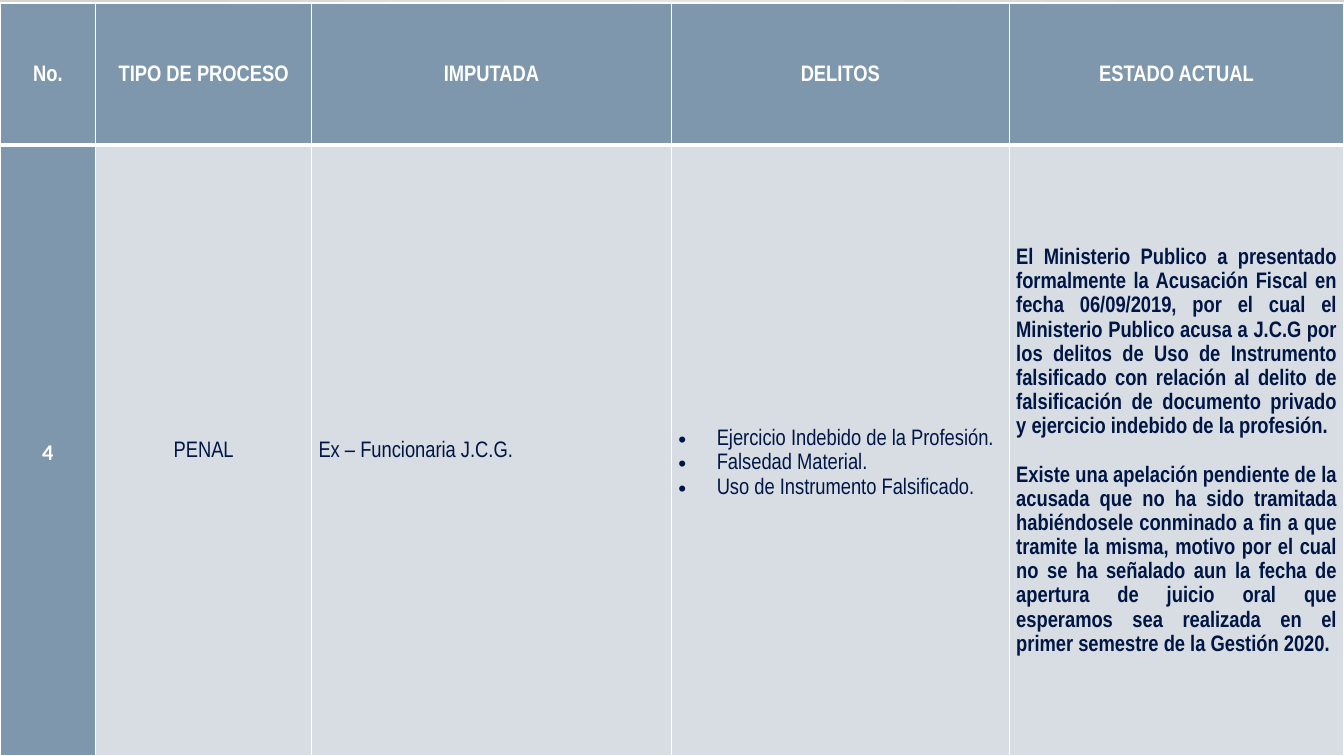
import pptx
import pptx.util
import pptx.oxml
import pptx.oxml.ns
import pptx.dml.color
import pptx.enum.text

Inches = pptx.util.Inches
Pt = pptx.util.Pt
RGB = pptx.dml.color.RGBColor
ALIGN = pptx.enum.text.PP_ALIGN

WHITE = RGB(0xFF, 0xFF, 0xFF)
GREY = RGB(0xD3, 0xD3, 0xD3)
STEEL = RGB(0x7E, 0x97, 0xAD)
PALE = RGB(0xD8, 0xDD, 0xE3)
NAVY = RGB(0x00, 0x16, 0x44)

HEADS = ["No.", "TIPO DE PROCESO", "IMPUTADA", "DELITOS", "ESTADO ACTUAL"]
CRIMES = [
    "Ejercicio Indebido de la Profesión.",
    "Falsedad Material.",
    "Uso de Instrumento Falsificado.",
]
STATUS = [
    "El Ministerio Publico a presentado formalmente la Acusación Fiscal en "
    "fecha 06/09/2019, por el cual el Ministerio Publico acusa a J.C.G por los "
    "delitos de Uso de Instrumento falsificado con relación al delito de "
    "falsificación de documento privado y ejercicio indebido de la profesión.",
    "Existe una apelación pendiente de la acusada que no ha sido tramitada "
    "habiéndosele conminado a fin a que tramite la misma, motivo por el cual "
    "no se ha señalado aun la fecha de apertura de juicio oral que esperamos "
    "sea realizada en el primer semestre de la Gestión 2020.",
]
WIDTHS = [0.95, 2.14, 3.57, 3.35, 3.32]
HEIGHTS = [1.41, 6.06]
TOP = 0.03
GAP = Pt(17.25)

HEAD = {"fill": STEEL, "color": WHITE, "bold": True, "align": ALIGN.CENTER}
BODY = {"fill": PALE, "color": NAVY, "bold": False, "align": ALIGN.JUSTIFY}
ROWS = [
    [([text], HEAD) for text in HEADS],
    [
        (["4"], HEAD | {"name": "Calibri"}),
        (["PENAL"], BODY | {"align": ALIGN.CENTER}),
        (["Ex – Funcionaria J.C.G."], BODY),
        (CRIMES, BODY | {"bullet": True, "top": GAP}),
        (STATUS, BODY | {"bold": True, "gap": GAP}),
    ],
]


def paint(slide):
    """Give the slide a radial gradient background."""
    fill = slide.background.fill
    fill.gradient()
    grad = slide.background._cSld.bg.bgPr.find(pptx.oxml.ns.qn("a:gradFill"))
    for child in list(grad):
        grad.remove(child)
    stops = "".join(
        f'<a:gs pos="{pos * 1000}"><a:srgbClr val="{color}"/></a:gs>'
        for pos, color in [(0, WHITE), (41, WHITE), (100, GREY)])
    new = pptx.oxml.parse_xml(
        f'<a:gradFill {pptx.oxml.ns.nsdecls("a")}><a:gsLst>{stops}</a:gsLst>'
        '<a:path path="circle"><a:fillToRect l="50000" t="80000" '
        'r="50000" b="20000"/></a:path></a:gradFill>')
    for child in list(new):
        grad.append(child)


def edge(cell, sides):
    props = cell._tc.get_or_add_tcPr()
    for spot, (side, width) in enumerate(sides.items()):
        props.insert(spot, pptx.oxml.parse_xml(
            f'<a:ln{side} {pptx.oxml.ns.nsdecls("a")} w="{Pt(width)}"><a:solidFill>'
            f'<a:srgbClr val="{WHITE}"/></a:solidFill></a:ln{side}>'))


def bullet(para):
    props = para._p.get_or_add_pPr()
    props.set("marL", str(Inches(0.38)))
    props.set("indent", str(-Inches(0.38)))
    for tag in ('buFont typeface="Arial"', 'buChar char="•"'):
        props.append(pptx.oxml.parse_xml(
            f'<a:{tag} {pptx.oxml.ns.nsdecls("a")}/>'))


def write(cell, lines, look):
    cell.fill.solid()
    cell.fill.fore_color.rgb = look["fill"]
    frame = {
        "vertical_anchor": pptx.enum.text.MSO_ANCHOR.MIDDLE,
        "margin_left": Inches(0.07), "margin_right": Inches(0.07),
        "margin_top": look.get("top", 0), "margin_bottom": 0,
    }
    for key, value in frame.items():
        setattr(cell, key, value)
    for spot, line in enumerate(lines):
        body = cell.text_frame
        para = body.add_paragraph() if spot else body.paragraphs[0]
        para.alignment = look["align"]
        para.line_spacing = 1.15
        if spot and "gap" in look:
            para.space_before = look["gap"]
        if look.get("bullet"):
            bullet(para)
        run = para.add_run()
        run.text = line
        font = {"size": Pt(16), "bold": look["bold"],
                "name": look.get("name", "Arial Narrow")}
        for key, value in font.items():
            setattr(run.font, key, value)
        run.font.color.rgb = look["color"]


def main():
    deck = pptx.Presentation()
    deck.slide_width, deck.slide_height = Inches(13.33), Inches(7.5)
    slide = deck.slides.add_slide(deck.slide_layouts[6])
    paint(slide)
    table = slide.shapes.add_table(
        len(ROWS), len(WIDTHS), 0, Inches(TOP),
        Inches(sum(WIDTHS)), Inches(sum(HEIGHTS))).table
    for col, width in zip(table.columns, WIDTHS):
        col.width = Inches(width)
    for row, height in zip(table.rows, HEIGHTS):
        row.height = Inches(height)
    borders = [{"L": 1, "R": 1, "T": 1, "B": 3}, {"L": 1, "R": 1, "T": 3, "B": 1}]
    for r, row in enumerate(ROWS):
        for c, (lines, look) in enumerate(row):
            cell = table.cell(r, c)
            write(cell, lines, look)
            edge(cell, borders[r])
    deck.save("out.pptx")


if __name__ == "__main__":
    main()
